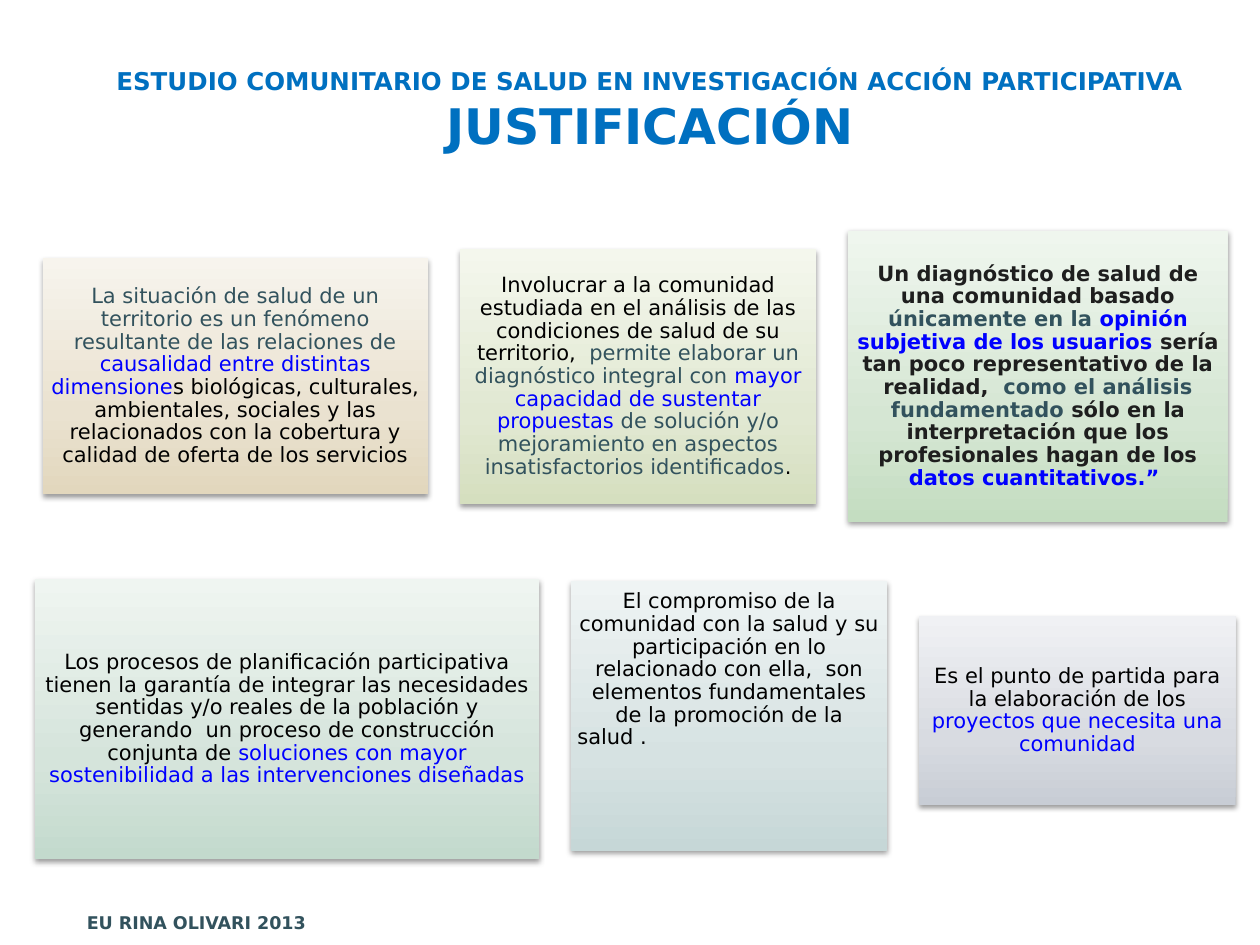
"""Build the slide that justifies participatory community health studies."""
from copy import deepcopy
from dataclasses import dataclass

from lxml.etree import SubElement
from pptx import Presentation
from pptx.dml.color import RGBColor
from pptx.enum.shapes import MSO_SHAPE as Shape
from pptx.enum.text import MSO_ANCHOR as Anchor, PP_ALIGN as Align
from pptx.oxml.ns import qn
from pptx.util import Cm, Pt

FONT = "DejaVu Sans"
BLACK, CHARCOAL, SLATE, BLUE, TITLE_BLUE = "000000", "1E1E1E", "32525D", "0000FF", "0070C0"
GAP = 0.64
INSET = 0.13


@dataclass
class Card:
    top: float
    width: float
    height: float
    gradient: tuple[str, str, str]
    runs: list[tuple[str, str]]
    bold: bool = False
    ending: str = ""


@dataclass
class Row:
    left: float
    cards: list[Card]


ROWS = [
    Row(0.86, [
        Card(5.21, 7.77, 4.75, ("E2D7BD", "EAE2D0", "F7F4ED"), [
            ("La situación de salud de un territorio es un fenómeno resultante de las relaciones de ", SLATE),
            ("causalidad entre distintas dimensione", BLUE),
            ("s biológicas, culturales, ambientales, sociales y las relacionados con la cobertura y "
             "calidad de oferta de los servicios", BLACK),
        ]),
        Card(5.03, 7.19, 5.13, ("D5DFBF", "E1E8D2", "F4F7ED"), [
            ("Involucrar a la comunidad estudiada en el análisis de las condiciones de salud de su "
             "territorio,  ", BLACK),
            ("permite elaborar un diagnóstico integral con ", SLATE),
            ("mayor capacidad de sustentar propuestas ", BLUE),
            ("de solución y/o mejoramiento en aspectos insatisfactorios identificados", SLATE),
            (".", BLACK),
        ]),
        Card(4.65, 7.65, 5.87, ("C4DDC1", "D5E6D3", "EFF6EE"), [
            ("Un diagnóstico de salud de una comunidad basado ", CHARCOAL),
            ("únicamente en la ", SLATE),
            ("opinión subjetiva de los usuarios ", BLUE),
            ("sería tan poco representativo de la realidad,  ", CHARCOAL),
            ("como el análisis fundamentado ", SLATE),
            ("sólo en la interpretación que los profesionales hagan de los ", CHARCOAL),
            ("datos cuantitativos.” ", BLUE),
        ], bold=True),
    ]),
    Row(0.71, [
        Card(11.68, 10.16, 5.64, ("C3DACD", "D5E4DB", "EFF5F1"), [
            ("Los procesos de planificación participativa tienen la garantía de integrar las "
             "necesidades sentidas y/o reales de la población y generando  un proceso de "
             "construcción conjunta de ", BLACK),
            ("soluciones con mayor sostenibilidad a las intervenciones diseñadas", BLUE),
        ]),
        Card(11.71, 6.38, 5.44, ("C6D7D7", "D6E2E2", "EFF4F4"), [
            ("El compromiso de la comunidad con la salud y su participación en lo relacionado con "
             "ella,  son elementos fundamentales de la promoción de la", BLACK),
        ], ending="salud ."),
        Card(12.42, 6.38, 3.81, ("C8CDD5", "D8DBE1", "F0F1F4"), [
            ("Es el punto de partida para la elaboración de los ", BLACK),
            ("proyectos que necesita una comunidad", BLUE),
        ]),
    ]),
]


def color(value: str) -> RGBColor:
    return RGBColor.from_string(value)


def set_font(font, size: float, bold: bool) -> None:
    font.name, font.size, font.bold = FONT, Pt(size), bold


def add_run(paragraph, text: str, run_color: str):
    run = paragraph.add_run()
    run.text = text
    run.font.color.rgb = color(run_color)
    return run


def fill_gradient(shape, colors: tuple[str, str, str]) -> None:
    shape.fill.gradient()
    shape.fill.gradient_angle = 90
    stop_list = shape._element.spPr.find(".//" + qn("a:gsLst"))
    stop_list.append(deepcopy(stop_list[0]))
    for stop, position, value in zip(shape.fill.gradient_stops, (0, 0.35, 1), colors):
        stop.position = position
        stop.color.rgb = color(value)


def add_shadow(shape) -> None:
    shape.shadow.inherit = False
    effects = shape._element.spPr.find(qn("a:effectLst"))
    shadow = SubElement(effects, qn("a:outerShdw"), blurRad="40000", dist="20000",
                        dir="5400000", rotWithShape="0")
    shade = SubElement(shadow, qn("a:srgbClr"), val=BLACK)
    SubElement(shade, qn("a:alpha"), val="38000")


def add_card(slide, card: Card, left: float) -> None:
    shape = slide.shapes.add_shape(Shape.RECTANGLE, Cm(left), Cm(card.top),
                                   Cm(card.width), Cm(card.height))
    fill_gradient(shape, card.gradient)
    shape.line.fill.background()
    add_shadow(shape)
    frame = shape.text_frame
    frame.word_wrap = True
    frame.vertical_anchor = Anchor.TOP if card.ending else Anchor.MIDDLE
    frame.margin_left = frame.margin_right = frame.margin_bottom = Cm(INSET)
    frame.margin_top = Cm(0.2 if card.ending else INSET)
    paragraph = frame.paragraphs[0]
    paragraph.alignment = Align.CENTER
    for text, run_color in card.runs:
        add_run(paragraph, text, run_color)
    if card.ending:
        last = frame.add_paragraph()
        last.alignment = Align.LEFT
        add_run(last, card.ending, BLACK)
    for paragraph in frame.paragraphs:
        paragraph.line_spacing = 0.9
        set_font(paragraph.font, 12, card.bold)


def add_title(slide) -> None:
    frame = slide.shapes.add_textbox(Cm(1.3), Cm(1.12), Cm(23.6), Cm(2.21)).text_frame
    frame.word_wrap = True
    frame.vertical_anchor = Anchor.MIDDLE
    paragraph = frame.paragraphs[0]
    paragraph.alignment = Align.CENTER
    set_font(paragraph.font, 14, True)
    add_run(paragraph, "ESTUDIO COMUNITARIO DE SALUD EN INVESTIGACIÓN ACCIÓN PARTICIPATIVA ", TITLE_BLUE)
    add_run(paragraph, "JUSTIFICACIÓN", TITLE_BLUE).font.size = Pt(28)


def add_footer(slide) -> None:
    shape = slide.shapes.add_shape(Shape.RECTANGLE, Cm(1.5), Cm(18.14), Cm(21.79), Cm(0.91))
    shape.shadow.inherit = False
    shape.line.fill.background()
    shape.fill.solid()
    shape.fill.fore_color.rgb = color("FFFFFF")
    SubElement(shape._element.spPr.find(".//" + qn("a:srgbClr")), qn("a:alpha"), val="33000")
    shape.text_frame.vertical_anchor = Anchor.MIDDLE
    paragraph = shape.text_frame.paragraphs[0]
    paragraph.alignment = Align.LEFT
    set_font(paragraph.font, 10, True)
    add_run(paragraph, "EU RINA OLIVARI 2013", SLATE)


def main() -> None:
    presentation = Presentation()
    presentation.slide_width, presentation.slide_height = Cm(25.4), Cm(19.05)
    slide = presentation.slides.add_slide(presentation.slide_layouts[6])
    for row in ROWS:
        left = row.left
        for card in row.cards:
            add_card(slide, card, left)
            left += card.width + GAP
    add_footer(slide)
    add_title(slide)
    presentation.save("out.pptx")


if __name__ == "__main__":
    main()
